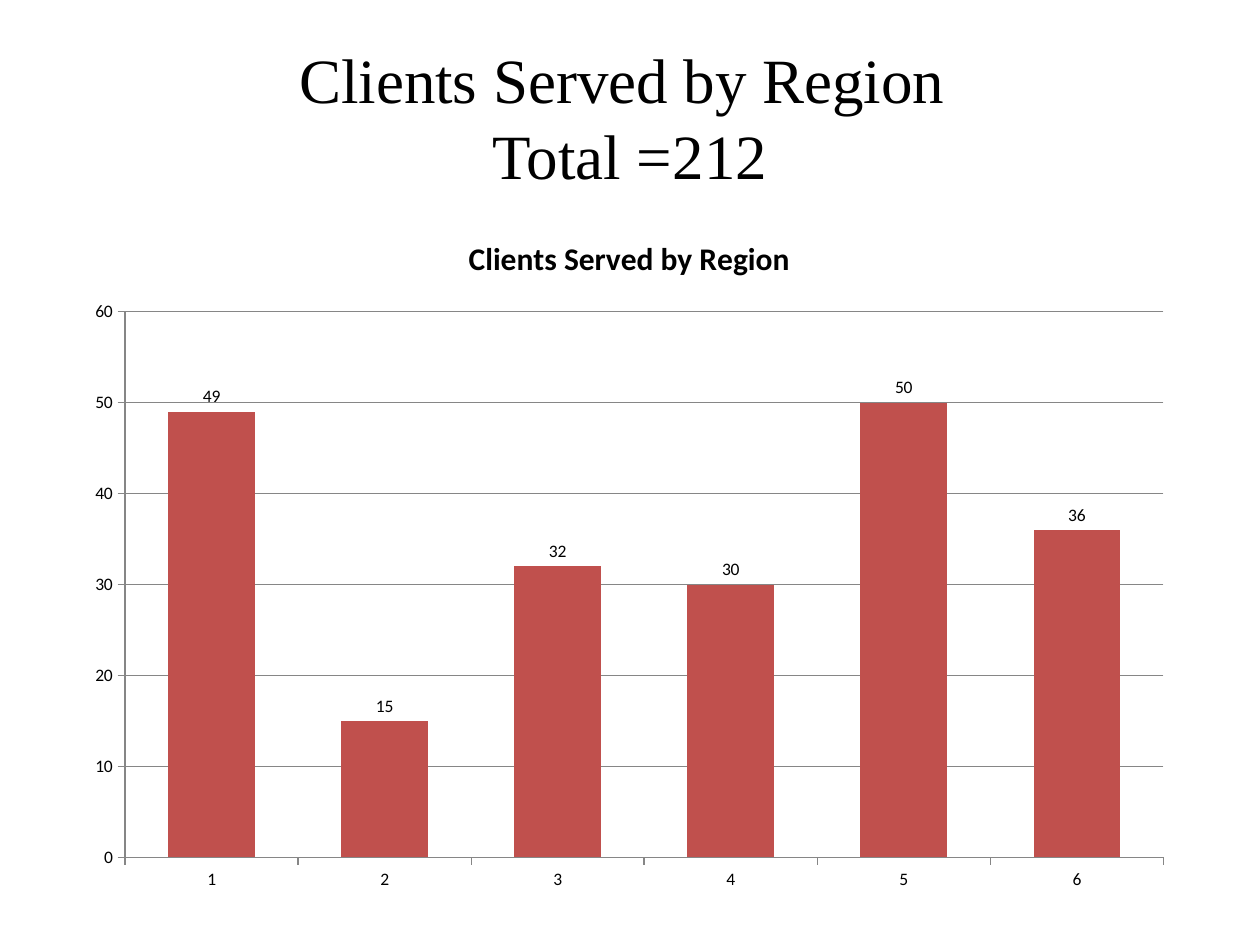
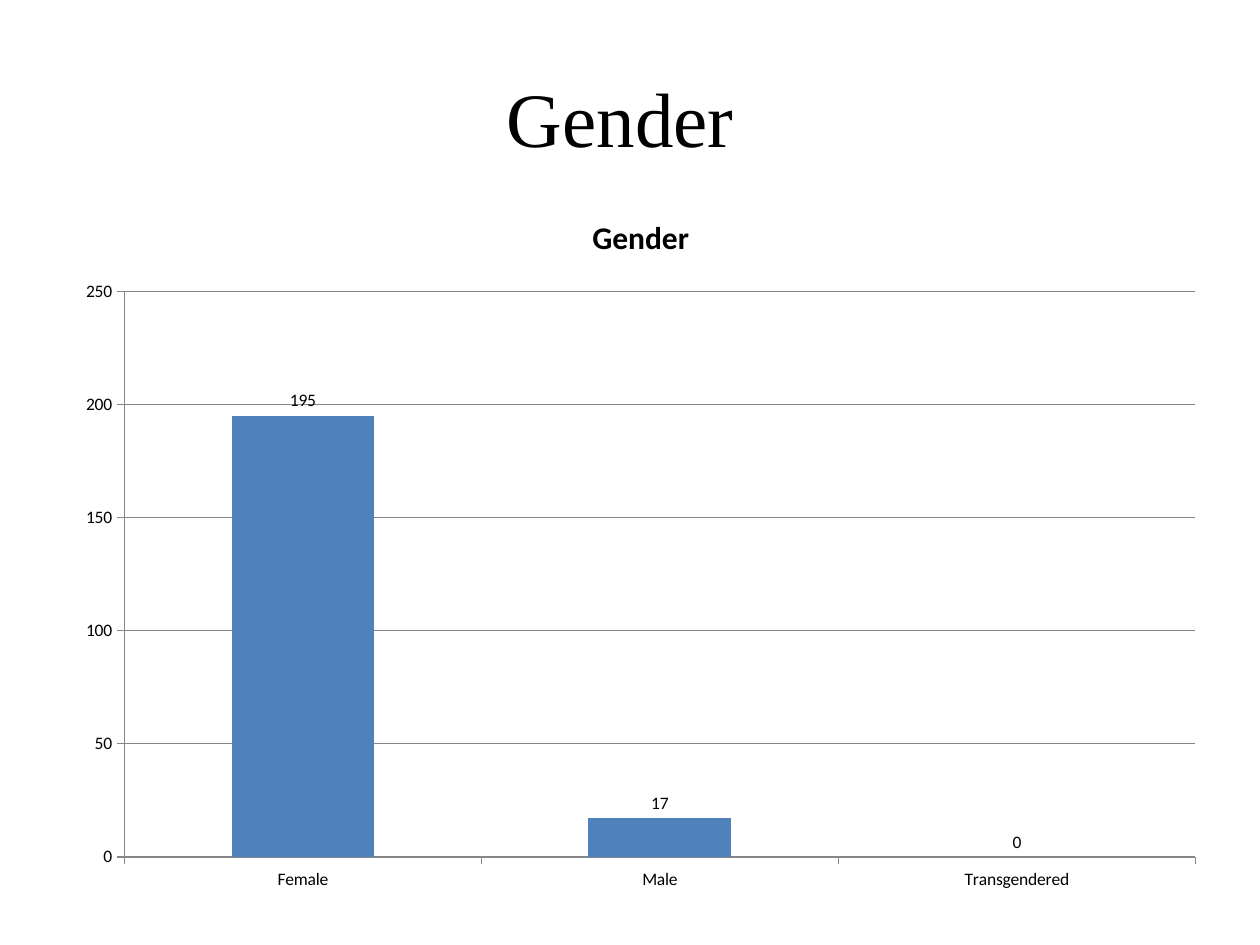
from pptx import Presentation
from pptx.chart.data import CategoryChartData
from pptx.dml.color import RGBColor
from pptx.enum.chart import XL_CHART_TYPE, XL_LABEL_POSITION, XL_TICK_MARK
from pptx.enum.text import MSO_ANCHOR, PP_ALIGN
from pptx.util import Inches, Pt

BLACK = RGBColor(0x00, 0x00, 0x00)
AXIS_GREY = RGBColor(0x86, 0x86, 0x86)
RED = RGBColor(0xC0, 0x50, 0x4D)
BLUE = RGBColor(0x4F, 0x81, 0xBD)
TITLE_FONT = "Times New Roman"
CHART_FONT = "Calibri"
TITLE_ONLY_LAYOUT = 5
TITLE_BOX = (0.5, 0.3, 9, 1.25)

SLIDES = [
    {
        "title": "Clients Served by Region \vTotal =212",
        "title_size": 36,
        "chart_title": "Clients Served by Region",
        "chart_box": (0.58, 1.67, 8.83, 5.5),
        "values": {"1": 49, "2": 15, "3": 32, "4": 30, "5": 50, "6": 36},
        "color": RED,
        "gap": 100,
        "axis_top": 60,
        "axis_step": 10,
    },
    {
        "title": "Gender ",
        "title_size": 44,
        "chart_title": "Gender",
        "chart_box": (0.5, 1.5, 9.17, 5.67),
        "values": {"Female": 195, "Male": 17, "Transgendered": 0},
        "color": BLUE,
        "gap": 150,
        "axis_top": 250,
        "axis_step": 50,
    },
]


def set_font(font, name, size, bold=False):
    font.name = name
    font.size = Pt(size)
    font.bold = bold
    font.color.rgb = BLACK


def set_line(line):
    line.color.rgb = AXIS_GREY
    line.width = Pt(0.75)


def add_title(slide, text, size):
    title = slide.shapes.title
    title.left, title.top, title.width, title.height = map(Inches, TITLE_BOX)
    frame = title.text_frame
    frame.vertical_anchor = MSO_ANCHOR.MIDDLE
    frame.text = text
    paragraph = frame.paragraphs[0]
    paragraph.alignment = PP_ALIGN.CENTER
    set_font(paragraph.font, TITLE_FONT, size)


def add_column_chart(slide, content):
    data = CategoryChartData()
    data.categories = content["values"].keys()
    data.add_series("Series 1", content["values"].values())
    chart = slide.shapes.add_chart(
        XL_CHART_TYPE.COLUMN_CLUSTERED, *map(Inches, content["chart_box"]), data
    ).chart
    set_font(chart.font, CHART_FONT, 10)
    chart.has_legend = False

    chart.has_title = True
    chart.chart_title.include_in_layout = False
    title_frame = chart.chart_title.text_frame
    title_frame.text = content["chart_title"]
    set_font(title_frame.paragraphs[0].font, CHART_FONT, 18, bold=True)

    for axis in (chart.category_axis, chart.value_axis):
        axis.major_tick_mark = XL_TICK_MARK.OUTSIDE
        axis.minor_tick_mark = XL_TICK_MARK.NONE
        set_line(axis.format.line)
    value_axis = chart.value_axis
    value_axis.minimum_scale = 0
    value_axis.maximum_scale = content["axis_top"]
    value_axis.major_unit = content["axis_step"]
    value_axis.has_major_gridlines = True
    set_line(value_axis.major_gridlines.format.line)

    plot = chart.plots[0]
    plot.gap_width = content["gap"]
    plot.vary_by_categories = False
    fill = plot.series[0].format.fill
    fill.solid()
    fill.fore_color.rgb = content["color"]
    plot.has_data_labels = True
    plot.data_labels.show_value = True
    plot.data_labels.position = XL_LABEL_POSITION.OUTSIDE_END


def main():
    presentation = Presentation()
    presentation.slide_width = Inches(10)
    presentation.slide_height = Inches(7.5)
    layout = presentation.slide_layouts[TITLE_ONLY_LAYOUT]
    for content in SLIDES:
        slide = presentation.slides.add_slide(layout)
        add_title(slide, content["title"], content["title_size"])
        add_column_chart(slide, content)
    presentation.save("out.pptx")


if __name__ == "__main__":
    main()
